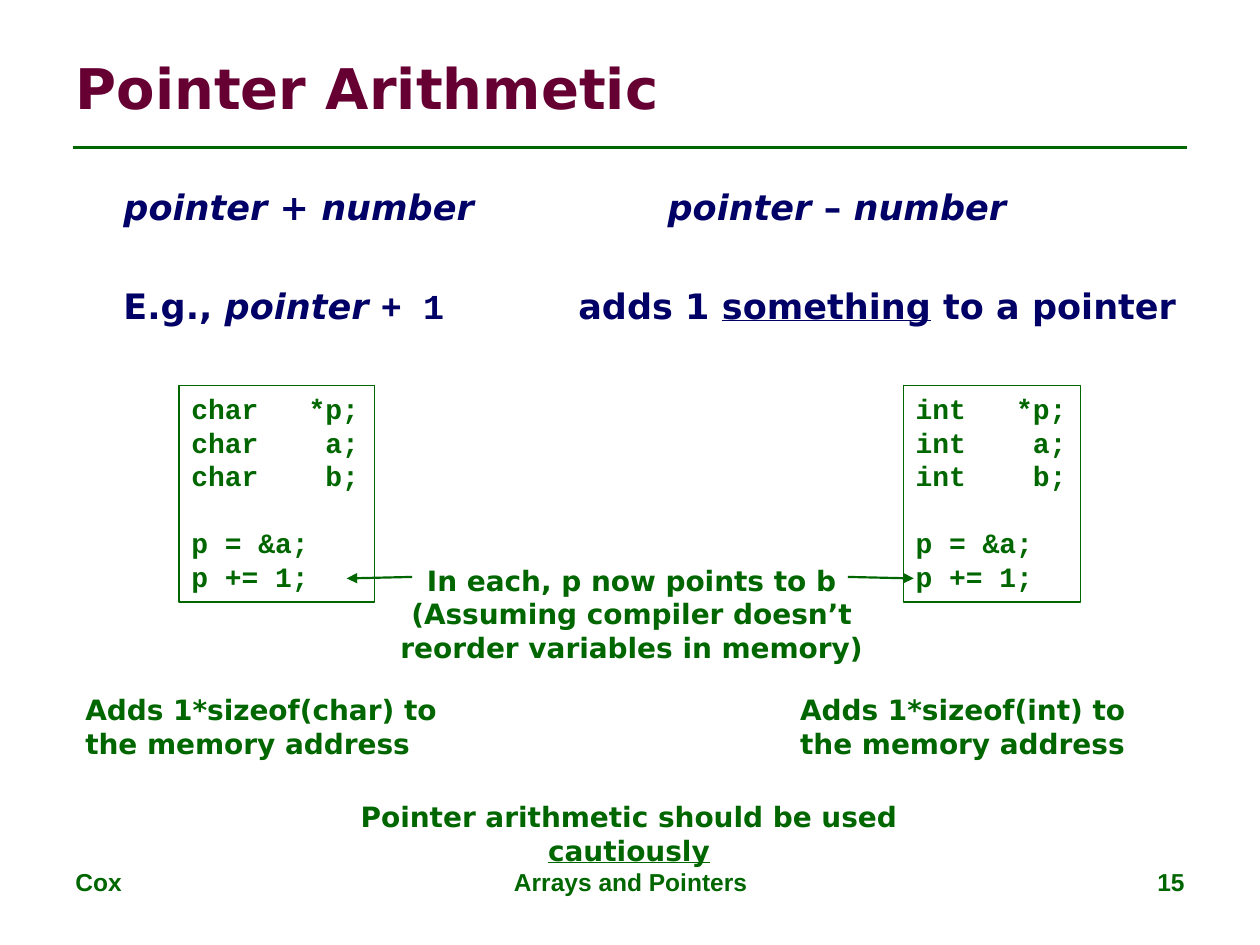
"""Build the Pointer Arithmetic slide."""
import pptx
import pptx.dml.color
import pptx.enum.shapes
import pptx.enum.text
import pptx.oxml
import pptx.oxml.ns
import pptx.util
from lxml import etree

Cm = pptx.util.Cm
Pt = pptx.util.Pt
Align = pptx.enum.text.PP_ALIGN
Anchor = pptx.enum.text.MSO_ANCHOR
qn = pptx.oxml.ns.qn

GREEN, NAVY, MAROON = "006600", "000066", "660033"
SANS, MONO, FOOT = "DejaVu Sans", "Courier New", "Arial"


def color(value):
    return pptx.dml.color.RGBColor.from_string(value)


class Deck:
    def __init__(self):
        self.file = pptx.Presentation()
        self.file.slide_width, self.file.slide_height = Cm(25.4), Cm(19.05)
        self.slide = self.file.slides.add_slide(self.file.slide_layouts[5])

    def style(self, run, size, font=SANS, ink=GREEN, marks=""):
        run.font.size, run.font.name, run.font.bold = Pt(size), font, True
        run.font.color.rgb = color(ink)
        run.font.italic = "i" in marks
        run.font.underline = "u" in marks

    def title(self, wording, left, top, width, height):
        heading = self.slide.shapes.title
        heading.left, heading.top = Cm(left), Cm(top)
        heading.width, heading.height = Cm(width), Cm(height)
        heading.text_frame.text = wording
        heading.text_frame.vertical_anchor = Anchor.MIDDLE
        paragraph = heading.text_frame.paragraphs[0]
        paragraph.alignment = Align.LEFT
        self.style(paragraph.runs[0], 32, ink=MAROON)

    def text(self, wording, left, top, width, height, align=Align.LEFT,
             size=16, font=SANS, leading=19.2):
        box = self.slide.shapes.add_textbox(Cm(left), Cm(top), Cm(width), Cm(height))
        box.text_frame.word_wrap = True
        box.text_frame.text = wording
        for paragraph in box.text_frame.paragraphs:
            paragraph.alignment = align
            paragraph.line_spacing = Pt(leading)
            self.style(paragraph.runs[0], size, font)
        return box.text_frame

    def phrases(self, rows, left, top, width, height, indent, gap):
        box = self.slide.shapes.add_textbox(Cm(left), Cm(top), Cm(width), Cm(height))
        frame = box.text_frame
        frame.word_wrap = True
        frame.margin_left = Cm(indent)
        for number, (stop, parts) in enumerate(rows):
            paragraph = frame.add_paragraph() if number else frame.paragraphs[0]
            if number:
                paragraph.space_before = Pt(gap)
            tabs = etree.SubElement(paragraph._p.get_or_add_pPr(), qn("a:tabLst"))
            etree.SubElement(tabs, qn("a:tab"), pos=str(Cm(stop)), algn="l")
            for wording, marks in parts:
                run = paragraph.add_run()
                run.text = wording
                self.style(run, 20, MONO if "m" in marks else SANS, NAVY, marks)

    def code(self, kind, left, top, width, height):
        box = self.slide.shapes.add_shape(
            pptx.enum.shapes.MSO_SHAPE.RECTANGLE,
            Cm(left), Cm(top), Cm(width), Cm(height))
        box.shadow.inherit = False
        box.fill.background()
        box.line.color.rgb = color(GREEN)
        box.line.width = Pt(0.75)
        frame = box.text_frame
        frame.word_wrap = False
        frame.vertical_anchor = Anchor.TOP
        frame.text = "\n".join([f"{kind}   *p;", f"{kind}    a;", f"{kind}    b;",
                                "p = &a;", "p += 1;"])
        for paragraph in frame.paragraphs:
            paragraph.alignment = Align.LEFT
            paragraph.line_spacing = Pt(19.2)
            self.style(paragraph.runs[0], 16, MONO)
        frame.paragraphs[3].space_before = Pt(19.2)

    def line(self, start, end, width, arrow=False):
        stroke = self.slide.shapes.add_connector(
            pptx.enum.shapes.MSO_CONNECTOR.STRAIGHT,
            *[Cm(value) for value in start + end])
        stroke.line.color.rgb = color(GREEN)
        stroke.line.width = Pt(width)
        if arrow:
            etree.SubElement(stroke.line._get_or_add_ln(), qn("a:tailEnd"),
                             type="triangle")
        etree.SubElement(stroke._element.spPr, qn("a:effectLst"))


def main():
    deck = Deck()
    deck.line((1.47, 2.97), (23.93, 2.97), 1.5)
    for wording, left, width, align in [
            ("Cox", 1.27, 5.92, Align.LEFT),
            ("Arrays and Pointers", 8.69, 8.05, Align.CENTER),
            ("15", 18.21, 5.92, Align.RIGHT)]:
        deck.text(wording, left, 17.35, width, 1.32, align, 14, FOOT, 16.8)

    deck.title("Pointer Arithmetic", 1.27, 0.76, 22.86, 1.98)
    deck.phrases([
        (10.97, [("pointer", "i"), (" + ", ""), ("number\tpointer", "i"),
                 (" – ", ""), ("number", "i")]),
        (9.17, [("E.g., ", ""), ("pointer ", "i"), ("+ 1", "m"), ("\tadds 1 ", ""),
                ("something", "u"), (" to a pointer", "")]),
    ], 1.27, 3.61, 22.86, 4.34, indent=1.22, gap=32.5)

    for kind, code_left, code_width, note_left, note_width in [
            ("char", 3.61, 3.94, 1.47, 8.03),
            ("int", 18.21, 3.58, 15.88, 7.77)]:
        deck.code(kind, code_left, 7.77, code_width, 4.37)
        deck.text(f"Adds 1*sizeof({kind}) to the memory address",
                  note_left, 13.84, note_width, 1.63)

    deck.text("In each, p now points to b\n"
              "(Assuming compiler doesn’t reorder variables in memory)",
              7.49, 11.23, 10.49, 2.29, Align.CENTER)
    for start, end in [(8.31, 6.99), (17.09, 18.42)]:
        deck.line((start, 11.63), (end, 11.66), 1.25, arrow=True)

    advice = deck.text("Pointer arithmetic should be used ",
                       5.48, 16, 14.4, 0.94, Align.CENTER)
    caution = advice.paragraphs[0].add_run()
    caution.text = "cautiously"
    deck.style(caution, 16, marks="u")
    deck.file.save("out.pptx")


if __name__ == "__main__":
    main()
